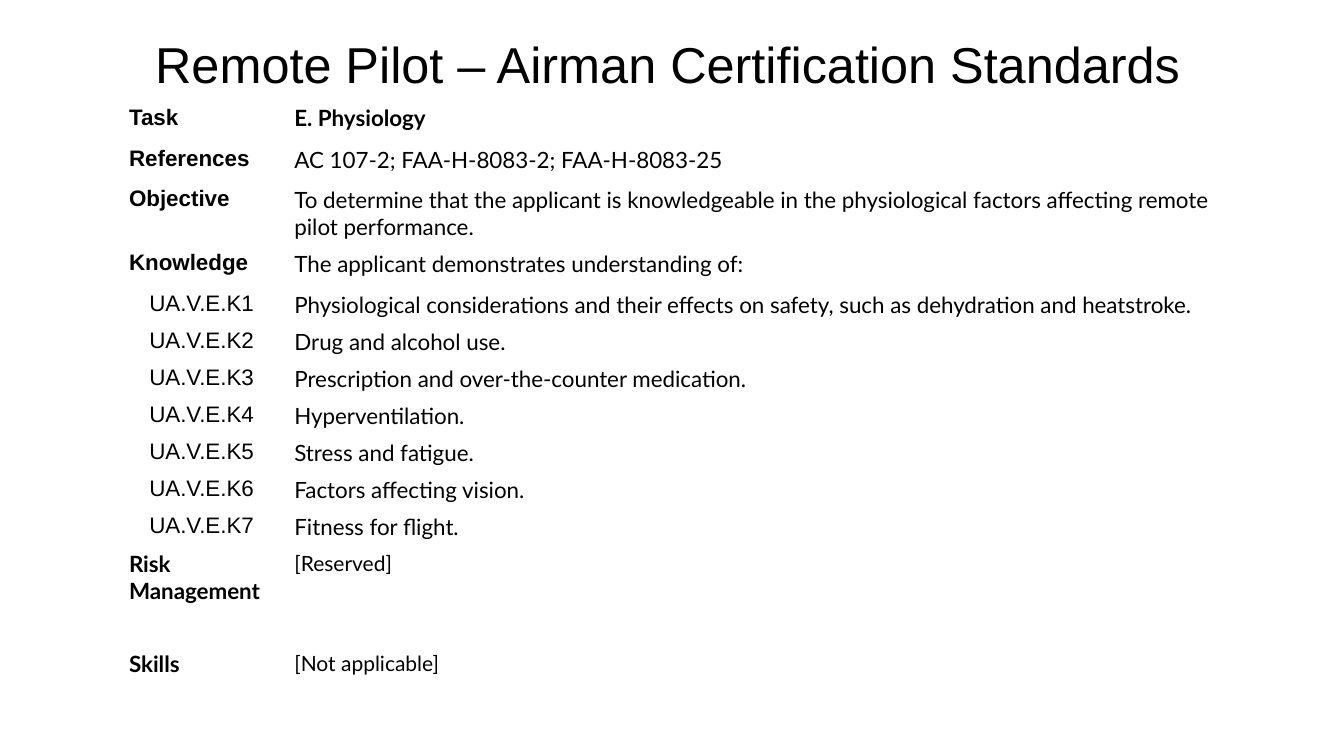
from dataclasses import dataclass

from lxml import etree
from pptx import Presentation
from pptx import util as u
from pptx.dml.color import RGBColor
from pptx.enum import text
from pptx.oxml.ns import qn


@dataclass(frozen=True)
class Theme:
    ink: str = "000000"
    rule: str = "FFFFFF"
    label_font: str = "Arial"
    body_font: str = "Lato"
    title_size: int = 36
    body_size: int = 16
    note_size: int = 15
    thin: int = 1
    thick: int = 3


THEME = Theme()
WIDTH, HEIGHT = 13.33, 7.5
TABLE_LEFT, TABLE_TOP = 1.18, 0.99
COLUMNS = (1.64, 9.35)
CODE_ROW = 0.36  # least height of a one-line row

TITLE = "Remote Pilot – Airman Certification Standards"
HEADINGS = [  # label, text, row height
    ("Task", "E. Physiology", 0.41),
    ("References", "AC 107-2; FAA-H-8083-2; FAA-H-8083-25", 0.4),
    ("Objective", "To determine that the applicant is knowledgeable in the "
     "physiological factors affecting remote pilot performance.", 0.63),
    ("Knowledge", "The applicant demonstrates understanding of:", 0.41),
]
KNOWLEDGE = [
    "Physiological considerations and their effects on safety, "
    "such as dehydration and heatstroke.",
    "Drug and alcohol use.",
    "Prescription and over-the-counter medication.",
    "Hyperventilation.",
    "Stress and fatigue.",
    "Factors affecting vision.",
    "Fitness for flight.",
]
CLOSING = [
    ("Risk Management", "[Reserved]", 0.63),
    ("", "", CODE_ROW),
    ("Skills", "[Not applicable]", CODE_ROW),
]


def write(frame, words, font, size, bold=False, align=text.PP_ALIGN.LEFT):
    """Put one styled run into a text frame."""
    para = frame.paragraphs[0]
    para.alignment = align
    span = para.add_run()
    span.text = words
    style = {"name": font, "size": u.Pt(size), "bold": bold}
    for key, value in style.items():
        setattr(span.font, key, value)
    span.font.color.rgb = RGBColor.from_string(THEME.ink)


def add_title(page):
    box = page.shapes.add_textbox(u.Inches(1.44), u.Inches(0.28),
                                  u.Inches(10.47), u.Inches(0.71))
    box.text_frame.word_wrap = False
    box.text_frame.auto_size = text.MSO_AUTO_SIZE.SHAPE_TO_FIT_TEXT
    write(box.text_frame, TITLE, THEME.label_font, THEME.title_size)


def set_borders(cell, bottom):
    """Draw the four cell borders; they come before the fill in tcPr."""
    props = cell._tc.get_or_add_tcPr()
    widths = {"L": THEME.thin, "R": THEME.thin, "T": THEME.thin, "B": bottom}
    for place, (side, width) in enumerate(widths.items()):
        line = etree.Element(qn(f"a:ln{side}"), w=str(u.Pt(width)))
        fill = etree.SubElement(line, qn("a:solidFill"))
        etree.SubElement(fill, qn("a:srgbClr"), val=THEME.rule)
        props.insert(place, line)


def table_rows():
    """Return (label style, label, text style, text, height) for each row."""
    label, body = THEME.label_font, THEME.body_font
    size, note = THEME.body_size, THEME.note_size
    rows = []
    for name, words, height in HEADINGS:
        rows.append(((label, size, True), name,
                     (body, size, name == "Task"), words, height))
    for number, words in enumerate(KNOWLEDGE, 1):
        rows.append(((label, size, False, text.PP_ALIGN.CENTER),
                     f"UA.V.E.K{number}", (body, size), words, CODE_ROW))
    for name, words, height in CLOSING:
        rows.append(((body, size, True), name, (body, note), words, height))
    return rows


def add_standards_table(page):
    rows = table_rows()
    table = page.shapes.add_table(
        len(rows), len(COLUMNS), u.Inches(TABLE_LEFT), u.Inches(TABLE_TOP),
        u.Inches(sum(COLUMNS)), u.Inches(sum(row[-1] for row in rows))).table
    table.horz_banding = False
    for column, width in zip(table.columns, COLUMNS):
        column.width = u.Inches(width)

    for index, (label_style, label, body_style, words, height) in enumerate(rows):
        table.rows[index].height = u.Inches(height)
        contents = ((label, label_style), (words, body_style))
        for cell, (content, style) in zip(table.rows[index].cells, contents):
            cell.fill.background()
            set_borders(cell, THEME.thin if index else THEME.thick)
            if content:
                write(cell.text_frame, content, *style)
            else:  # keeps the spacer row from growing
                cell.margin_top = cell.margin_bottom = 0


def main():
    deck = Presentation()
    deck.slide_width, deck.slide_height = u.Inches(WIDTH), u.Inches(HEIGHT)
    page = deck.slides.add_slide(deck.slide_layouts[6])
    add_title(page)
    add_standards_table(page)
    deck.save("out.pptx")


if __name__ == "__main__":
    main()
